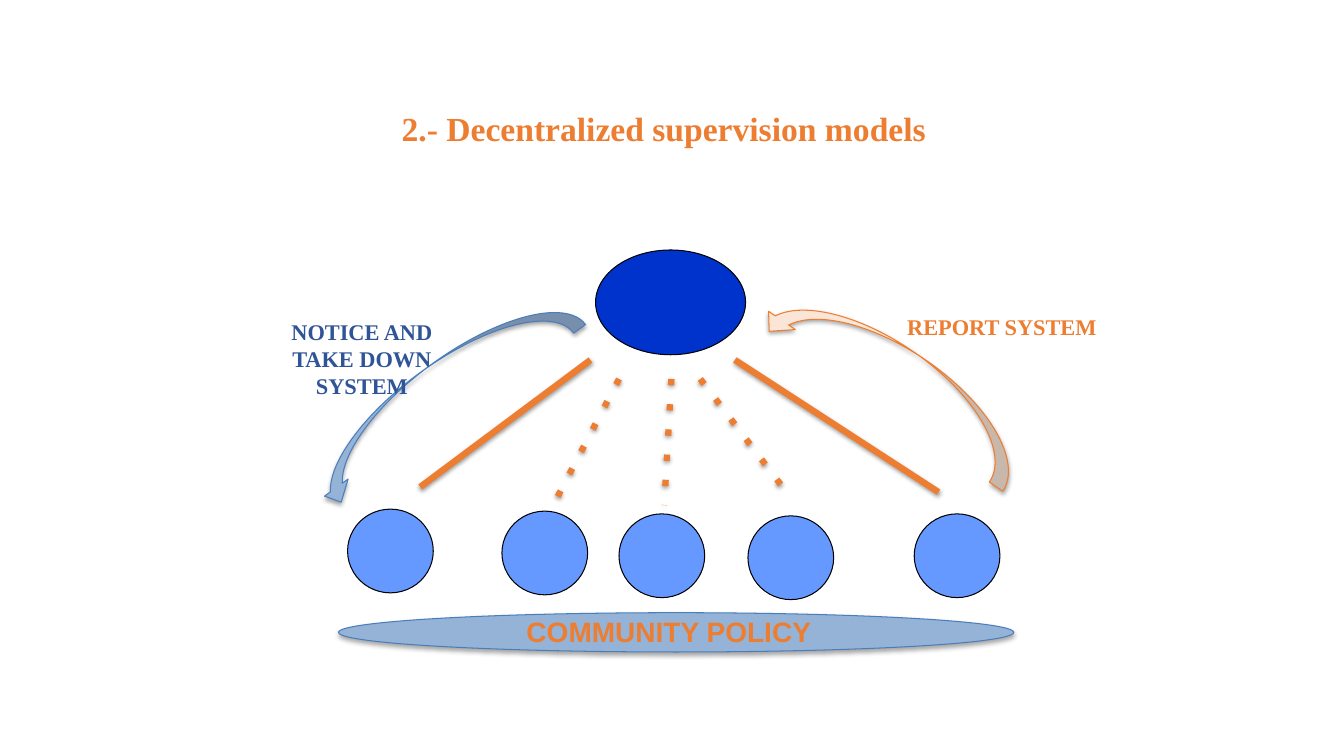
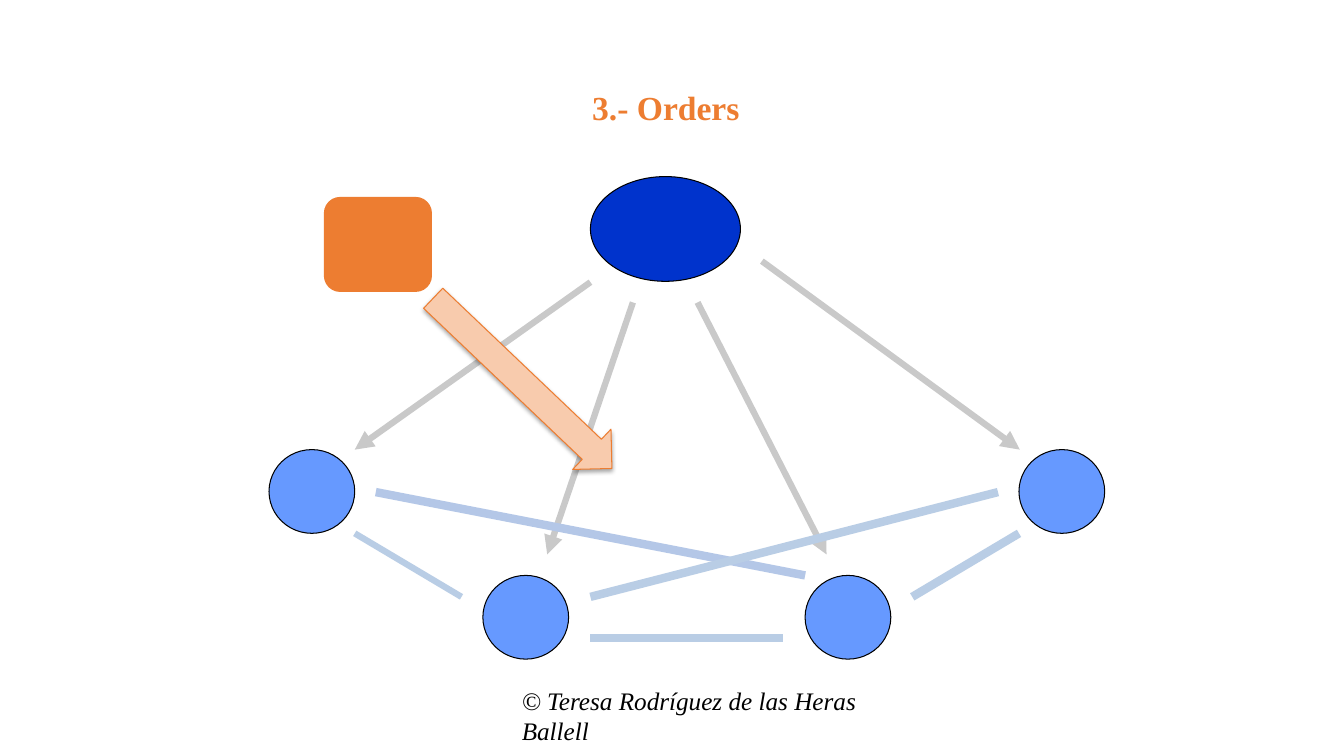
from typing import NamedTuple

from lxml import etree
from pptx import Presentation
from pptx import util as u
from pptx.dml.color import RGBColor
from pptx.enum import shapes as s, text as t
from pptx.oxml.ns import qn

BLACK, ORANGE, PEACH, CREAM = "000000", "ED7D31", "F8CBAD", "FBE5D6"
NAVY, SKY, STEEL, EDGE, INK = "0033CC", "6699FF", "95B3D7", "4A7EBB", "2F5597"
GREY, PALE, MIST = "C9C9C9", "B9CDE5", "B4C7E7"
SERIF, SANS = "Times New Roman", "Arial"
HUB, NODE = (3.78, 2.64), (2.16, 2.11)
KIND = s.MSO_SHAPE


class Box(NamedTuple):
    """A place in centimetres."""
    x: float
    y: float
    w: float
    h: float


class Link(NamedTuple):
    """A straight line between two points in centimetres."""
    x1: float
    y1: float
    x2: float
    y2: float
    tone: str = ORANGE
    wide: float = 4.5
    dash: bool = False
    head: bool = False
    shade: bool = False


class Form(NamedTuple):
    kind: s.MSO_SHAPE
    box: Box
    fill: str
    edge: str = BLACK
    wide: float = 0.75
    turn: float = 0
    shade: bool = False


def color(code: str) -> RGBColor:
    return RGBColor.from_string(code)


def add(owner, tag: str, **attrs):
    return etree.SubElement(owner, qn(tag), attrs)


def cast(item, shade: bool, dist: int = 23000, alpha: int = 35000) -> None:
    """Replace the theme shadow by a soft drop shadow or by none."""
    fx = add(item.element.spPr, "a:effectLst")
    if shade:
        drop = add(fx, "a:outerShdw", blurRad="40000", dist=str(dist),
                   dir="5400000", rotWithShape="0")
        add(add(drop, "a:srgbClr", val=BLACK), "a:alpha", val=str(alpha))


def place(item, box: Box) -> None:
    item.left, item.top, item.width, item.height = map(u.Cm, box)


def draw(slide, form: Form) -> None:
    item = slide.shapes.add_shape(form.kind, *map(u.Cm, form.box))
    item.rotation = form.turn
    item.fill.solid()
    item.fill.fore_color.rgb = color(form.fill)
    item.line.color.rgb = color(form.edge)
    item.line.width = u.Pt(form.wide)
    cast(item, form.shade)


def join(slide, link: Link) -> None:
    item = slide.shapes.add_connector(s.MSO_CONNECTOR.STRAIGHT, *map(u.Cm, link[:4]))
    item.line.color.rgb = color(link.tone)
    item.line.width = u.Pt(link.wide)
    ln = item.line._get_or_add_ln()
    if link.dash:
        add(ln, "a:prstDash", val="dot")
    if link.head:
        add(ln, "a:tailEnd", type="triangle")
    cast(item, link.shade, dist=20000, alpha=38000)


def write(item, words: str, *, size: float = 16, tone: str = ORANGE, font: str = SERIF,
          bold: bool = True, slant: bool = False, mid: bool = True) -> None:
    frame = item.text_frame
    frame.word_wrap = True
    frame.auto_size = t.MSO_AUTO_SIZE.NONE
    frame.vertical_anchor = t.MSO_ANCHOR.TOP
    para = frame.paragraphs[0]
    para.alignment = t.PP_ALIGN.CENTER if mid else t.PP_ALIGN.LEFT
    run = para.add_run()
    run.text = words
    face = run.font
    face.name, face.size, face.bold, face.italic = font, u.Pt(size), bold, slant
    face.color.rgb = color(tone)


def label(slide, box: Box, words: str, **style) -> None:
    write(slide.shapes.add_textbox(*map(u.Cm, box)), words, **style)


def start(deck, words: str, x: float, y: float):
    """Add a slide with its title at the given corner."""
    slide = deck.slides.add_slide(deck.slide_layouts[5])
    place(slide.shapes.title, Box(x, y, 23.6, 1.27))
    write(slide.shapes.title, words, size=24)
    return slide


def net(slide, hub: tuple, nodes: list) -> None:
    """Draw the central oval and the circles around it."""
    for x, y in nodes:
        draw(slide, Form(KIND.OVAL, Box(x, y, *NODE), SKY))
    draw(slide, Form(KIND.OVAL, Box(*hub, *HUB), NAVY))


def models(deck) -> None:
    slide = start(deck, "2.- Decentralized supervision models", 4.93, 2.59)
    for ends, dash in (
        ((10.59, 12.27, 14.88, 9.07), False),
        ((18.52, 9.07, 23.65, 12.4), False),
        ((15.6, 9.55, 13.94, 12.73), True),
        ((16.92, 9.55, 16.74, 12.73), True),
        ((17.65, 9.55, 19.91, 12.52), True),
    ):
        join(slide, Link(*ends, dash=dash, shade=True))
    for form in (
        Form(KIND.OVAL, Box(8.53, 15.44, 17.02, 0.99), STEEL, EDGE, shade=True),
        Form(KIND.CURVED_RIGHT_ARROW, Box(10.36, 5.94, 1.47, 7.98), STEEL, EDGE,
             turn=54, shade=True),
        Form(KIND.CURVED_UP_ARROW, Box(18.85, 8.76, 7.54, 1.63), CREAM, ORANGE,
             turn=214.4, shade=True),
    ):
        draw(slide, form)
    label(slide, Box(11.43, 15.37, 10.85, 1.12), "COMMUNITY POLICY", size=20, font=SANS)
    label(slide, Box(6.3, 7.9, 5.64, 2.31), "NOTICE AND TAKE DOWN SYSTEM", tone=INK)
    label(slide, Box(22.33, 7.77, 5.84, 0.94), "REPORT SYSTEM")
    net(slide, (15.01, 6.3), [(8.76, 12.83), (12.65, 12.88), (15.6, 12.95),
                              (18.85, 13), (23.04, 12.95)])


def orders(deck) -> None:
    slide = start(deck, "3.- Orders", 4.98, 2.06)
    net(slide, (14.88, 4.45), [(6.78, 11.33), (12.17, 14.5), (20.29, 14.5), (25.68, 11.33)])
    for ends in (
        (14.88, 7.11, 8.94, 11.33),
        (15.95, 7.62, 13.79, 13.97),
        (17.58, 7.62, 20.83, 13.97),
        (19.2, 6.58, 25.7, 11.33),
    ):
        join(slide, Link(*ends, tone=GREY, head=True))
    for link in (
        Link(8.94, 13.44, 11.63, 15.04, PALE),
        Link(14.88, 16.08, 19.74, 16.08, PALE, 6),
        Link(22.99, 15.04, 25.68, 13.44, PALE, 6),
        Link(9.47, 12.4, 20.29, 14.5, MIST, 6),
        Link(14.88, 15.04, 25.15, 12.4, PALE, 6),
    ):
        join(slide, link)
    draw(slide, Form(KIND.DOWN_ARROW, Box(12.47, 6.55, 1.4, 6.22), PEACH, ORANGE,
                     turn=313.6, shade=True))
    label(slide, Box(12.9, 17.15, 9.25, 1.02), "© Teresa Rodríguez de las Heras Ballell",
          size=18, tone=BLACK, bold=False, slant=True, mid=False)
    draw(slide, Form(KIND.ROUNDED_RECTANGLE, Box(8.18, 4.98, 2.69, 2.36), ORANGE, ORANGE, 1))


def main() -> None:
    deck = Presentation()
    deck.slide_width, deck.slide_height = u.Cm(33.87), u.Cm(19.05)
    models(deck)
    orders(deck)
    deck.save("out.pptx")


if __name__ == "__main__":
    main()
